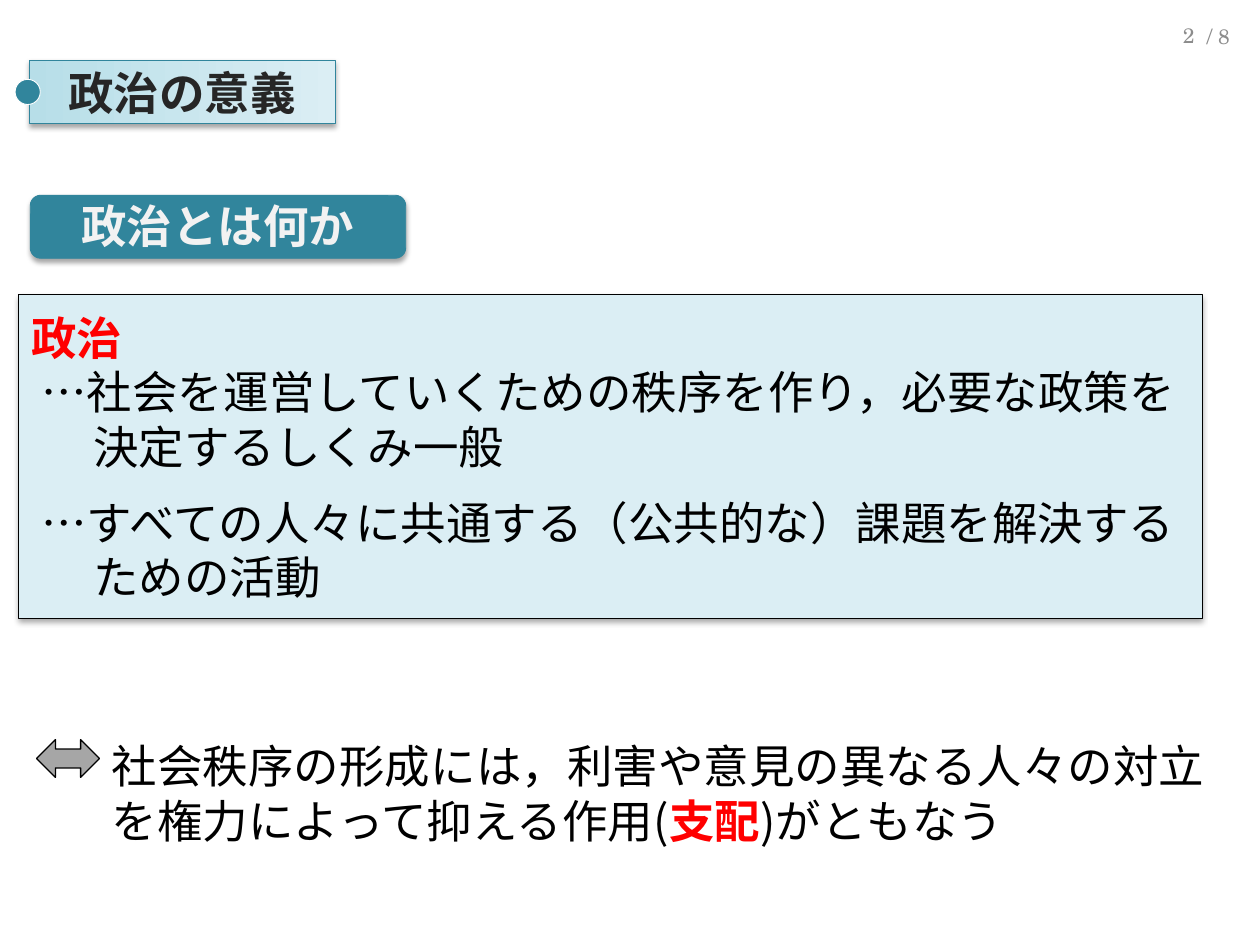
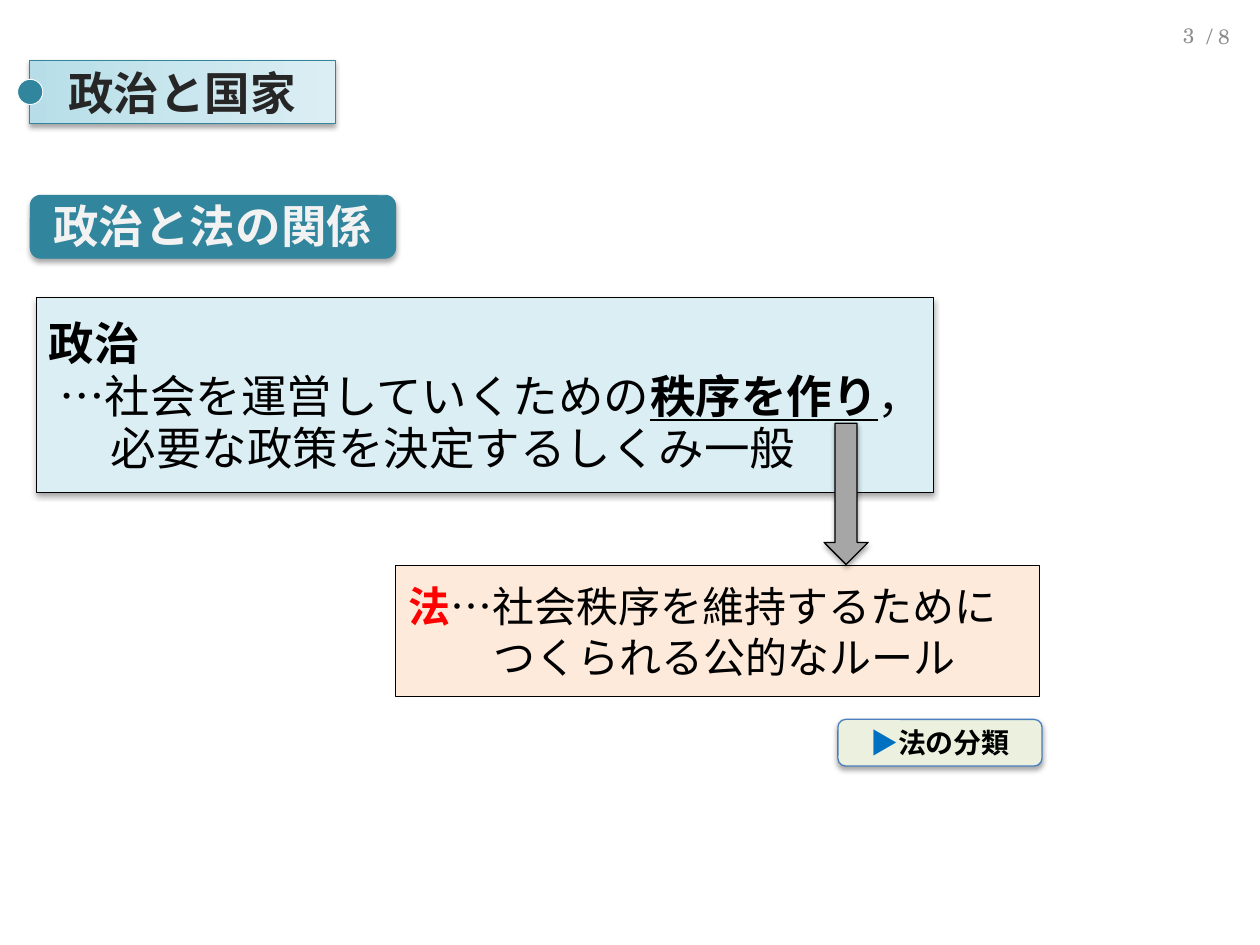
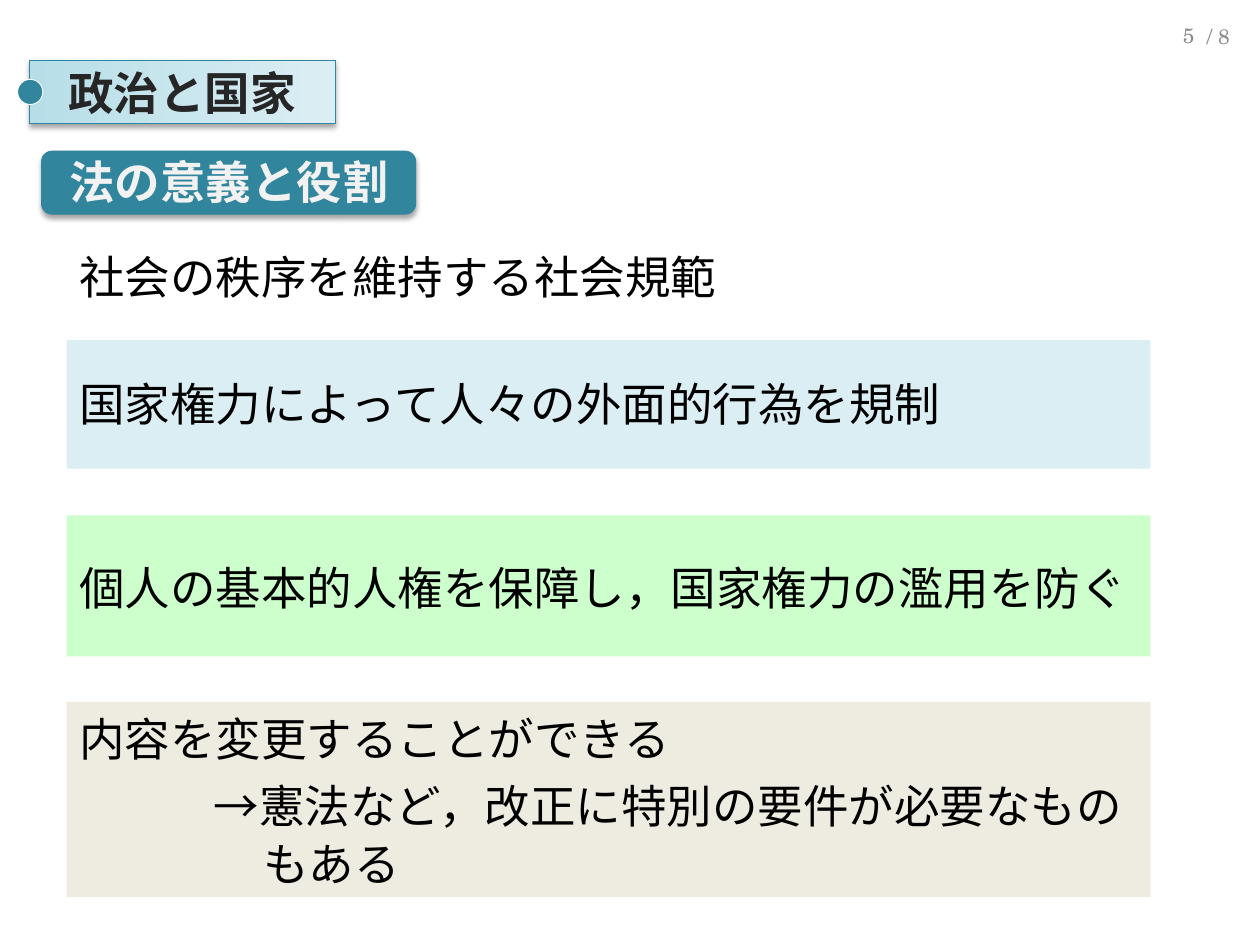
from dataclasses import dataclass

from lxml import etree
from pptx import Presentation
from pptx import util as u
from pptx.dml.color import RGBColor
from pptx.enum import shapes, text
from pptx.oxml import parse_xml
from pptx.oxml.ns import nsdecls, qn


@dataclass(frozen=True)
class Theme:
    body_font: str = "Noto Sans CJK JP"
    page_font: str = "TeX Gyre Schola"
    body: int = 26
    law: int = 24
    button: int = 16
    page: int = 12
    black: str = "000000"
    red: str = "FF0000"
    white: str = "FFFFFF"
    teal: str = "31859C"
    aqua: str = "B7DEE8"
    pale: str = "DBEEF4"
    title: str = "262626"
    heading: str = "F2F2F2"
    page_gray: str = "8C8C8C"
    arrow: str = "A6A6A6"
    peach: str = "FDEADA"
    mint: str = "EBF1DE"
    green: str = "CCFFCC"
    sand: str = "EEECE1"
    button_line: str = "4B7EBC"
    button_mark: str = "0070C0"


T = Theme()
RGB = RGBColor.from_string
SHAPE = shapes.MSO_SHAPE
CENTER, RIGHT = text.PP_ALIGN.CENTER, text.PP_ALIGN.RIGHT
MIDDLE, TOP = text.MSO_ANCHOR.MIDDLE, text.MSO_ANCHOR.TOP


def paint(sp, fill=None, line=None, weight=0.5, shadow=False):
    if fill:
        sp.fill.solid()
        sp.fill.fore_color.rgb = RGB(fill)
    if line:
        sp.line.color.rgb = RGB(line)
        sp.line.width = u.Pt(weight)
    else:
        sp.line.fill.background()
    sp.shadow.inherit = False
    if shadow:
        sp._element.spPr.find(qn("a:effectLst")).append(parse_xml(
            f'<a:outerShdw {nsdecls("a")} blurRad="39370" dist="22860" dir="5400000" rotWithShape="0">'
            '<a:srgbClr val="000000"><a:alpha val="35000"/></a:srgbClr></a:outerShdw>'))
    return sp


def write(sp, runs, size=T.body, color=T.black, bold=False, font=T.body_font,
          align=None, anchor=MIDDLE, left=0, first=0, spacing=None, before=None):
    tf = sp.text_frame
    tf.word_wrap = True
    tf.auto_size = text.MSO_AUTO_SIZE.NONE
    tf.vertical_anchor = anchor
    p = tf.add_paragraph() if tf.text else tf.paragraphs[0]
    p.alignment = align or text.PP_ALIGN.LEFT
    if left:
        pPr = p._p.get_or_add_pPr()
        pPr.set("marL", str(u.Inches(left)))
        pPr.set("indent", str(u.Inches(first)))
    if spacing:
        p.line_spacing = u.Pt(spacing)
    if before:
        p.space_before = u.Pt(before)
    p.font.size, p.font.bold = u.Pt(size), bold
    p.font.color.rgb = RGB(color)
    p.font.name = font
    etree.SubElement(p.font._rPr, qn("a:ea")).set("typeface", font)
    for words, run_color, run_bold, underline in runs:
        r = p.add_run()
        r.text = words
        if run_color:
            r.font.color.rgb = RGB(run_color)
        if run_bold:
            r.font.bold = True
        if underline:
            r.font.underline = True


prs = Presentation()
prs.slide_width, prs.slide_height = u.Inches(10), u.Inches(7.5)

pages = [
    ("2", "政治の意義", 0.12, "政治とは何か", (0.24, 1.55, 2.98, 0.5)),
    ("3", "政治と国家", 0.14, "政治と法の関係", (0.24, 1.55, 2.9, 0.5)),
    ("5", "政治と国家", 0.14, "法の意義と役割", (0.33, 1.2, 2.97, 0.5)),
]
for number, title, dot_left, heading, heading_box in pages:
    s = prs.slides.add_slide(prs.slide_layouts[5])

    sp = s.shapes.title
    sp.left, sp.top, sp.width, sp.height = map(u.Inches, (0.23, 0.48, 2.43, 0.5))
    sp._element.spPr.append(parse_xml(
        f'<a:prstGeom {nsdecls("a")} prst="roundRect"><a:avLst/></a:prstGeom>'))
    sp.fill.gradient()
    sp.fill.gradient_angle = 0
    for stop, color, position in zip(sp.fill.gradient_stops, (T.aqua, T.pale), (0, 1)):
        stop.color.rgb = RGB(color)
        stop.position = position
    paint(sp, line=T.teal, shadow=True)
    write(sp, [(title, None, False, False)], color=T.title, bold=True, align=CENTER)

    dot = s.shapes.add_shape(SHAPE.OVAL, *map(u.Inches, (dot_left, 0.63, 0.2, 0.2)))
    paint(dot, T.teal, T.white)

    sp = s.shapes.add_shape(SHAPE.ROUNDED_RECTANGLE, *map(u.Inches, heading_box))
    paint(sp, T.teal, T.teal, shadow=True)
    write(sp, [(heading, None, False, False)], color=T.heading, bold=True,
          align=CENTER, spacing=30)

    for words, box in ((number, (7.25, 0.15, 2.33, 0.26)), ("/ 8", (7.13, 0.15, 2.73, 0.27))):
        sp = s.shapes.add_textbox(*map(u.Inches, box))
        write(sp, [(words, None, False, False)], size=T.page, color=T.page_gray,
              font=T.page_font, align=RIGHT)

meaning, law, role = prs.slides

sp = meaning.shapes.add_shape(SHAPE.RECTANGLE, *map(u.Inches, (0.15, 2.34, 9.39, 2.57)))
paint(sp, T.pale, T.black, shadow=True)
write(sp, [("政治", None, False, False)], color=T.red, bold=True)
for words, before in (
    ("…社会を運営していくための秩序を作り，必要な政策を決定するしくみ一般", None),
    ("…すべての人々に共通する（公共的な）課題を解決するための活動", 12),
):
    write(sp, [(words, None, False, False)], left=0.49, first=-0.41, before=before)

sp = meaning.shapes.add_shape(SHAPE.LEFT_RIGHT_ARROW, *map(u.Inches, (0.29, 5.87, 0.5, 0.3)))
paint(sp, T.arrow, T.black, 0.75)
sp = meaning.shapes.add_textbox(*map(u.Inches, (0.79, 5.81, 8.96, 0.92)))
write(sp, [
    ("社会秩序の形成には，利害や意見の異なる人々の対立を権力によって抑える作用(", None, False, False),
    ("支配", T.red, True, False),
    (")がともなう", None, False, False),
], anchor=TOP)

sp = law.shapes.add_shape(SHAPE.RECTANGLE, *map(u.Inches, (0.29, 2.36, 7.12, 1.55)))
paint(sp, T.pale, T.black, shadow=True)
write(sp, [("政治", None, False, False)], bold=True)
write(sp, [
    ("…社会を運営していくための", None, False, False),
    ("秩序を作り", None, True, True),
    ("，必要な政策を決定するしくみ一般", None, False, False),
], left=0.49, first=-0.41, spacing=30)

sp = law.shapes.add_shape(SHAPE.RECTANGLE, *map(u.Inches, (3.14, 4.49, 5.11, 1.04)))
paint(sp, T.peach, T.black, 0.75)
write(sp, [
    ("法", T.red, True, False),
    ("…社会秩序を維持するためにつくられる公的なルール", None, False, False),
], size=T.law, left=0.68, first=-0.68)

sp = law.shapes.add_shape(SHAPE.DOWN_ARROW, *map(u.Inches, (6.54, 3.36, 0.35, 1.12)))
paint(sp, T.arrow, T.black, 0.75, shadow=True)
sp = law.shapes.add_shape(SHAPE.ROUNDED_RECTANGLE, *map(u.Inches, (6.65, 5.71, 1.62, 0.37)))
paint(sp, T.mint, T.button_line, 0.75, shadow=True)
write(sp, [("▶", T.button_mark, False, False), ("法の分類", None, False, False)],
      size=T.button, bold=True, align=CENTER)

sp = role.shapes.add_textbox(*map(u.Inches, (0.53, 1.94, 6.42, 0.46)))
write(sp, [("社会の秩序を維持する社会規範", None, False, False)], anchor=TOP, spacing=30)
for words, fill, top, height, spacing in (
    ("国家権力によって人々の外面的行為を規制", T.pale, 2.7, 1.02, 30),
    ("個人の基本的人権を保障し，国家権力の濫用を防ぐ", T.green, 4.09, 1.12, 33),
    ("内容を変更することができる", T.sand, 5.57, 1.55, 33),
):
    sp = role.shapes.add_shape(SHAPE.RECTANGLE, *map(u.Inches, (0.53, top, 8.6, height)))
    paint(sp, fill)
    write(sp, [(words, None, False, False)], spacing=spacing)
write(sp, [("→憲法など，改正に特別の要件が必要なものもある", None, False, False)],
      left=1.46, first=-0.39, spacing=33, before=5.2)

prs.save("out.pptx")
